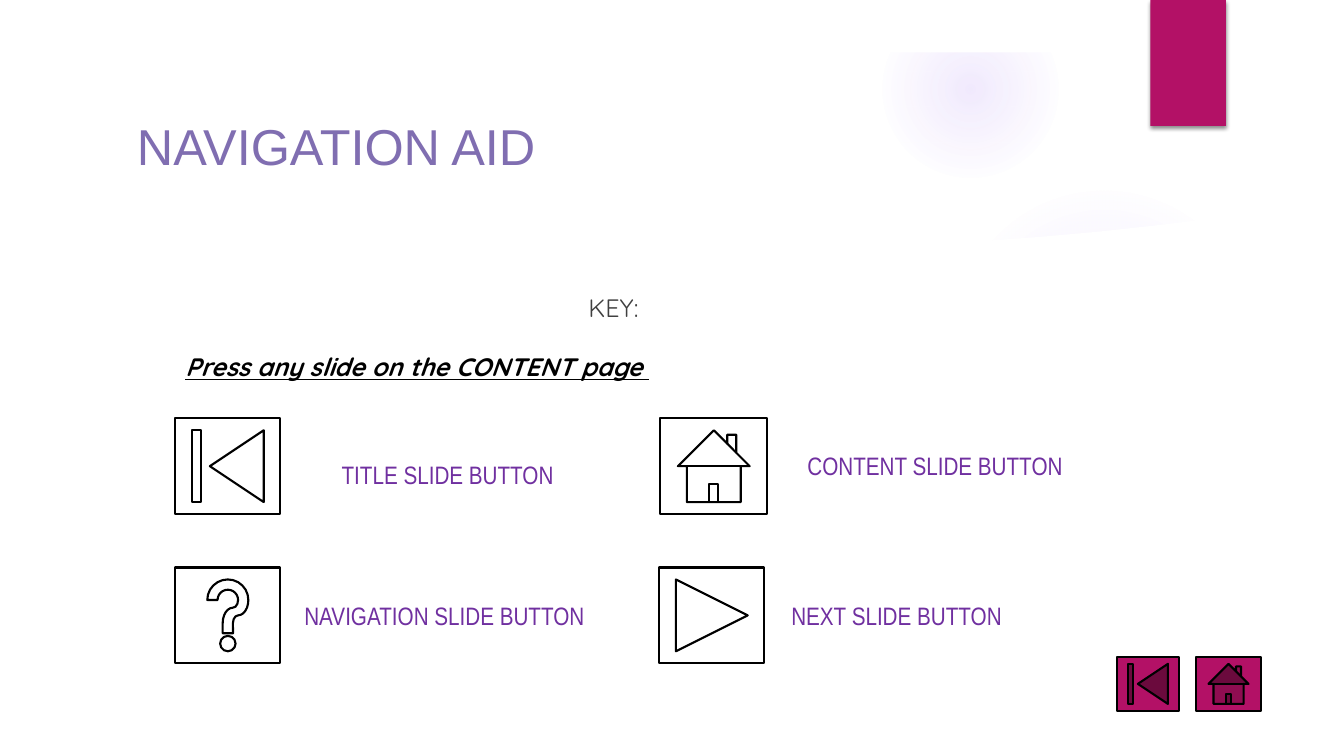
from pptx import Presentation, oxml, util as u
from pptx.dml.color import RGBColor
from pptx.enum import shapes, text
from pptx.oxml import ns

HUES = {"white": "FFFFFF", "black": "000000", "pink": "B31166", "glow": "9B6BF2",
        "title": "806EB1", "grey": "404040", "label": "7030A0"}
KIND = shapes.MSO_SHAPE
START, HELP = KIND.ACTION_BUTTON_BEGINNING, KIND.ACTION_BUTTON_HELP
HOME, NEXT = KIND.ACTION_BUTTON_HOME, KIND.ACTION_BUTTON_FORWARD_OR_NEXT

GLOWS = [
    ((9.41, 1.83, 3.08, 3.08), [(0, 7), (36, 6), (69, 0)]),
    ((8.75, 0.01, 1.75, 1.75), [(0, 14), (36, 7), (73, 0)]),
]
WAVE = [(0.5, 7), (0.5, 2.04), (1.59, 2.18), (2.83, 2.3), (4.44, 2.41), (5.83, 2.46),
        (7.08, 2.48), (8.4, 2.46), (9.49, 2.41), (10.32, 2.35), (10.88, 2.3),
        (11.44, 2.24), (12, 2.17), (12.56, 2.09), (12.84, 2.04), (12.84, 7)]
EDGE = (0, 0, 13.33, 0.52)
FLAG = (11.41, 0, 0.75, 1.25)
KEYS = [
    (START, (1.74, 4.15, 1.04, 0.95), "TITLE SLIDE BUTTON", (3.29, 4.51, 3.07, 0.4)),
    (HELP, (1.74, 5.63, 1.04, 0.95), "NAVIGATION SLIDE BUTTON", (2.92, 5.91, 3.57, 0.4)),
    (HOME, (6.55, 4.15, 1.06, 0.95), "CONTENT SLIDE BUTTON", (7.91, 4.42, 3.33, 0.4)),
    (NEXT, (6.54, 5.63, 1.04, 0.95), "NEXT SLIDE BUTTON", (7.75, 5.91, 3, 0.4)),
]
LINKS = [(START, (11.08, 6.52, 0.61, 0.53)), (HOME, (11.86, 6.52, 0.65, 0.53))]
LABEL = {"name": "Arial Narrow", "size": u.Pt(18)}
SAND = {"name": "Quicksand", "size": u.Pt(18)}
HEAD = {"name": "Arial", "size": u.Pt(36)}
STRONG = {**SAND, "bold": True, "italic": True, "underline": True}
LEFT, MID = text.PP_ALIGN.LEFT, text.PP_ALIGN.CENTER
TOP, CORE = text.MSO_ANCHOR.TOP, text.MSO_ANCHOR.MIDDLE
TEXTS = [
    ("NAVIGATION AID", (1.26, 1.06, 9.58, 0.77), "title", HEAD, LEFT, CORE),
    ("KEY:", (1.26, 2.85, 9.65, 3.74), "grey", SAND, MID, TOP),
    ("Press any slide on the CONTENT page ", (1.74, 3.44, 10.56, 0.4), "black", STRONG, LEFT, TOP),
]


def hue(name):
    return RGBColor.from_string(HUES[name])


def paint(shape, fill=None, line=None):
    shape.shadow.inherit = False
    if fill:
        shape.fill.solid()
        shape.fill.fore_color.rgb = hue(fill)
    else:
        shape.fill.background()
    if line:
        shape.line.color.rgb = hue(line)
        shape.line.width = u.Pt(1.5)
    else:
        shape.line.fill.background()
    return shape


def draw(slide, kind, box, fill=None, line=None):
    return paint(slide.shapes.add_shape(kind, *map(u.Inches, box)), fill, line)


def shine(shape, stops):
    marks = "".join(
        f'<a:gs pos="{pos * 1000}"><a:srgbClr val="{HUES["glow"]}">'
        f'<a:alpha val="{alpha * 1000}"/></a:srgbClr></a:gs>' for pos, alpha in stops)
    grad = oxml.parse_xml(
        f'<a:gradFill {ns.nsdecls("a")} rotWithShape="1"><a:gsLst>{marks}</a:gsLst>'
        '<a:path path="circle"><a:fillToRect l="50000" t="50000" r="50000" b="50000"/>'
        '</a:path></a:gradFill>')
    props = shape._element.spPr
    props.replace(props.find(ns.qn("a:noFill")), grad)


def shade(shape):
    shape._element.spPr.find(ns.qn("a:effectLst")).append(oxml.parse_xml(
        f'<a:outerShdw {ns.nsdecls("a")} blurRad="{u.Pt(3)}" dist="{u.Pt(2)}" dir="5400000" '
        f'rotWithShape="0"><a:srgbClr val="{HUES["black"]}"><a:alpha val="45000"/>'
        '</a:srgbClr></a:outerShdw>'))


def write(slide, words, box, color, style, align=LEFT, anchor=TOP):
    frame = slide.shapes.add_textbox(*map(u.Inches, box)).text_frame
    frame.word_wrap = True
    frame.vertical_anchor = anchor
    para = frame.paragraphs[0]
    para.alignment = align
    run = para.add_run()
    run.text = words
    run.font.color.rgb = hue(color)
    for key, value in style.items():
        setattr(run.font, key, value)


def main():
    """Build the navigation aid slide."""
    deck = Presentation()
    deck.slide_width, deck.slide_height = u.Inches(13.33), u.Inches(7.5)
    slide = deck.slides.add_slide(deck.slide_layouts[6])
    for box, stops in GLOWS:
        shine(draw(slide, KIND.OVAL, box), stops)
    points = [(u.Inches(x), u.Inches(y)) for x, y in WAVE]
    wave = slide.shapes.build_freeform(*points[0])
    wave.add_line_segments(points[1:])
    paint(wave.convert_to_shape(), "white")
    draw(slide, KIND.RECTANGLE, EDGE, "white")
    shade(draw(slide, KIND.RECTANGLE, FLAG, "pink"))
    for item in TEXTS:
        write(slide, *item)
    for kind, box, words, place in KEYS:
        draw(slide, kind, box, line="black")
        write(slide, words, place, "label", LABEL)
    for kind, box in LINKS:
        draw(slide, kind, box, "pink", "black")
    deck.save("out.pptx")


if __name__ == "__main__":
    main()
